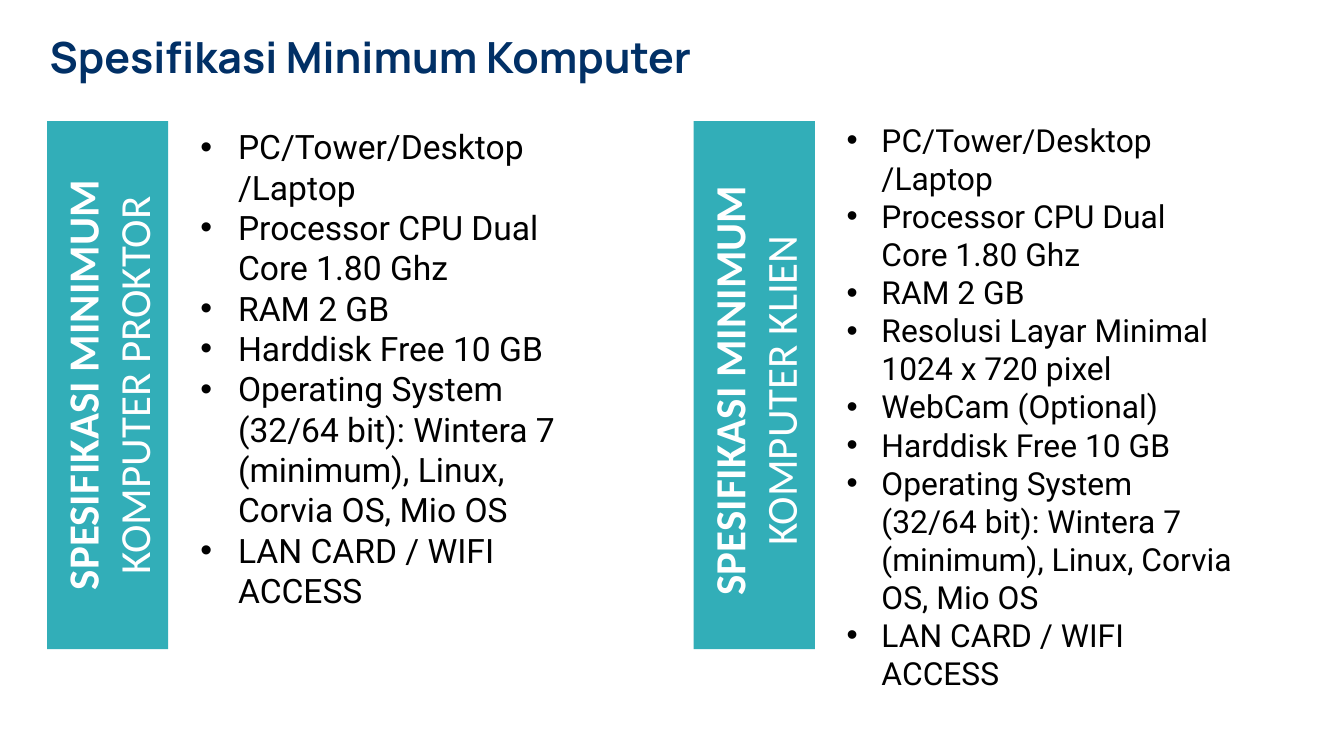
"""Build the slide of minimum computer specifications for proctor and client."""
import pptx
import pptx.dml.color
import pptx.enum.shapes
import pptx.enum.text
import pptx.oxml.ns
import pptx.util
from lxml import etree

Cm = pptx.util.Cm
Pt = pptx.util.Pt

HEADING = "Spesifikasi Minimum Komputer"
SYSTEMS = "Operating System (32/64 bit): Wintera 7 (minimum), Linux, Corvia OS, Mio OS"
TOWER = "PC/Tower/Desktop /Laptop"
PROCESSOR = "Processor CPU Dual Core 1.80 Ghz"
NETWORK = "LAN CARD / WIFI ACCESS"

COMPUTERS = [
    {
        "role": " KOMPUTER PROKTOR", "role_drop": 0,
        "specs": [TOWER, PROCESSOR, "RAM 2 GB", "Harddisk Free 10 GB", SYSTEMS, NETWORK],
        "area": (3.61, 2.29, 8.03, 9.42), "size": 18, "indent": 0.71, "hang": 0.71,
    },
    {
        "role": " KOMPUTER KLIEN", "role_drop": 0.1,
        "specs": [TOWER, PROCESSOR, "RAM 2 GB", "Resolusi Layar Minimal 1024 x 720 pixel",
                  "WebCam (Optional)", "Harddisk Free 10 GB", SYSTEMS, NETWORK],
        "area": (14.96, 2.18, 8.56, 11.1), "size": 17, "indent": 1.52, "hang": 0.66,
    },
]

NAVY, TEAL, WHITE, BLACK = "013066", "32AEB8", "FFFFFF", "000000"
BAR_LEFT, BAR_TOP, BAR_WIDTH, BAR_HEIGHT = 0.89, 2.29, 2.29, 9.98
BAR_PITCH = 12.22
ROLE_WIDTH, ROLE_HEIGHT = 8.23, 1.96


def color(value):
    return pptx.dml.color.RGBColor.from_string(value)


def bullet(paragraph, indent, hang):
    properties = paragraph._p.get_or_add_pPr()
    properties.set("marL", str(Cm(indent)))
    properties.set("indent", str(-Cm(hang)))
    bullet_color = etree.SubElement(properties, pptx.oxml.ns.qn("a:buClr"))
    etree.SubElement(bullet_color, pptx.oxml.ns.qn("a:srgbClr"), val=BLACK)
    etree.SubElement(properties, pptx.oxml.ns.qn("a:buFont"), typeface="Arial")
    etree.SubElement(properties, pptx.oxml.ns.qn("a:buChar"), char="•")


def add_text(slide, paragraphs, area, *, font, size, ink, insets=(0, 0), align=None,
             spacing=None, rotation=0, indent=None, hang=0):
    """Add a text box whose paragraphs are lists of (text, bold) runs."""
    box = slide.shapes.add_textbox(*map(Cm, area))
    box.rotation = rotation
    frame = box.text_frame
    frame.word_wrap = True
    frame.margin_left = frame.margin_right = Cm(insets[0])
    frame.margin_top = frame.margin_bottom = Cm(insets[1])
    for number, runs in enumerate(paragraphs):
        paragraph = frame.add_paragraph() if number else frame.paragraphs[0]
        if indent is not None:
            paragraph.level = 1
            bullet(paragraph, indent, hang)
        if align is not None:
            paragraph.alignment = align
        if spacing is not None:
            paragraph.line_spacing = spacing
        for text, bold in runs:
            run = paragraph.add_run()
            run.text = text
            run.font.name = font
            run.font.size = Pt(size)
            run.font.bold = bold
            run.font.color.rgb = color(ink)


def add_computer(slide, computer, left):
    bar = slide.shapes.add_shape(pptx.enum.shapes.MSO_SHAPE.RECTANGLE,
                                 Cm(left), Cm(BAR_TOP), Cm(BAR_WIDTH), Cm(BAR_HEIGHT))
    bar.shadow.inherit = False
    bar.fill.solid()
    bar.fill.fore_color.rgb = color(TEAL)
    bar.line.fill.background()

    add_text(slide, [[(spec, False)] for spec in computer["specs"]], computer["area"],
             font="Roboto", size=computer["size"], ink=BLACK, insets=(0.18, 0.1),
             indent=computer["indent"], hang=computer["hang"])

    role_left = left + (BAR_WIDTH - ROLE_WIDTH) / 2
    role_top = BAR_TOP + (BAR_HEIGHT - ROLE_HEIGHT) / 2 + computer["role_drop"]
    add_text(slide, [[("SPESIFIKASI MINIMUM", True), (computer["role"], False)]],
             (role_left, role_top, ROLE_WIDTH, ROLE_HEIGHT),
             font="Calibri", size=23, ink=WHITE, rotation=270,
             align=pptx.enum.text.PP_ALIGN.CENTER)


def main():
    deck = pptx.Presentation()
    deck.slide_width, deck.slide_height = Cm(25.4), Cm(14.29)
    slide = deck.slides.add_slide(deck.slide_layouts[6])
    add_text(slide, [[(HEADING, True)]], (0.69, 0.56, 24.26, 1.63),
             font="Manrope", size=23, ink=NAVY, insets=(0.25, 0.13), spacing=0.9)
    for number, computer in enumerate(COMPUTERS):
        add_computer(slide, computer, BAR_LEFT + number * BAR_PITCH)
    deck.save("out.pptx")


if __name__ == "__main__":
    main()
